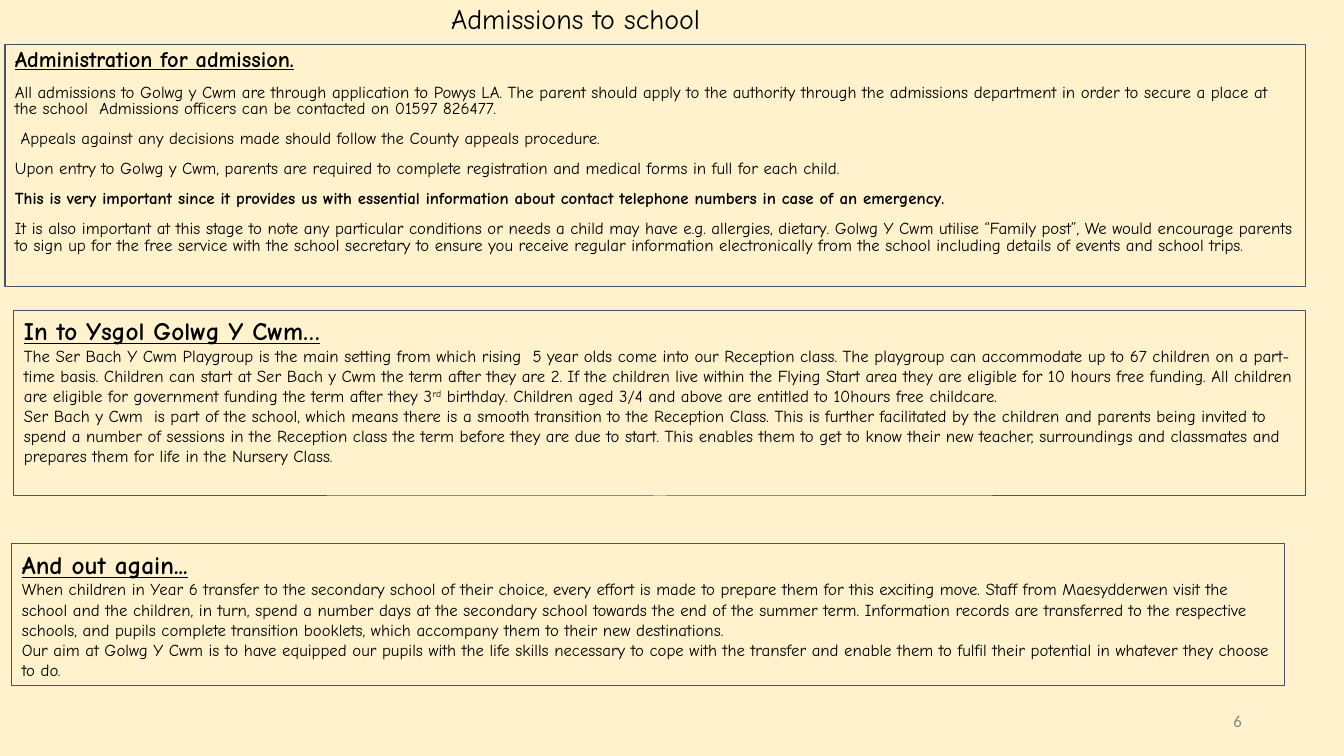
import pptx
import pptx.util
import pptx.dml.color
import pptx.enum.shapes
import pptx.enum.text
from dataclasses import dataclass

TITLE = ("Admissions to school", (441, -18, 492, 59))
PAGE_NUMBER = ("6", (950, 701, 302, 40))

# A paragraph is a list of (text, style) spans.
PANELS = [
    {
        "area": (5, 45, 1301, 242), "heading": "Administration for admission.",
        "heading_size": 16, "line_spacing": 0.8, "gap": 10,
        "paragraphs": [
            [("All admissions to Golwg y Cwm are through application to Powys LA. The parent should apply to the authority through the admissions department in order to secure a place at the school  Admissions officers can be contacted on 01597 826477.", "plain")],
            [(" Appeals against any decisions made should follow the County appeals procedure.", "plain")],
            [("Upon entry to Golwg y Cwm, parents are required to complete registration and medical forms in full for each child.", "plain")],
            [("This is very important since it provides us with essential information about contact telephone numbers in case of an emergency.", "bold")],
            [("It is also important at this stage to note any particular conditions or needs a child may have e.g. allergies, dietary. Golwg Y Cwm utilise “Family post”, We would encourage parents to sign up for the free service with the school secretary to ensure you receive regular information electronically from the school including details of events and school trips.", "plain")],
        ],
    },
    {
        "area": (14, 310, 1292, 186), "heading": "In to Ysgol Golwg Y Cwm…",
        "heading_size": 18, "line_spacing": 1.0, "gap": 0,
        "paragraphs": [
            [("The Ser Bach Y Cwm Playgroup is the main setting from which rising  5 year olds come into our Reception class. The playgroup can accommodate up to 67 children on a part-time basis. Children can start at Ser Bach y Cwm the term after they are 2. If the children live within the Flying Start area they are eligible for 10 hours free funding. All children are eligible for government funding the term after they 3", "plain"),
             ("rd", "superscript"),
             (" birthday. Children aged 3/4 and above are entitled to 10hours free childcare.", "plain")],
            [("Ser Bach y Cwm  is part of the school, which means there is a smooth transition to the Reception Class. This is further facilitated by the children and parents being invited to spend a number of sessions in the Reception class the term before they are due to start. This enables them to get to know their new teacher, surroundings and classmates and prepares them for life in the Nursery Class.", "plain")],
        ],
    },
    {
        "area": (12, 544, 1273, 142), "heading": "And out again...",
        "heading_size": 18, "line_spacing": 1.0, "gap": 0,
        "paragraphs": [
            [("When children in Year 6 transfer to the secondary school of their choice, every effort is made to prepare them for this exciting move. Staff from Maesydderwen visit the school and the children, in turn, spend a number days at the secondary school towards the end of the summer term. Information records are transferred to the respective schools, and pupils complete transition booklets, which accompany them to their new destinations.", "plain")],
            [("Our aim at Golwg Y Cwm is to have equipped our pupils with the life skills necessary to cope with the transfer and enable them to fulfil their potential in whatever they choose to do.", "plain")],
        ],
    },
]


@dataclass(frozen=True)
class Theme:
    background: str = "FFF2CC"
    border: str = "44546A"
    ink: str = "000000"
    muted: str = "888888"
    main_font: str = "Comic Neue"
    number_font: str = "Calibri"
    title_size: int = 20
    body_size: int = 12
    border_width: float = 0.75


THEME = Theme()
PX = 914400 / 100.8
ALIGN = pptx.enum.text.PP_ALIGN
ANCHOR = pptx.enum.text.MSO_ANCHOR


def emu(pixels):
    return pptx.util.Emu(round(pixels * PX))


def color(code):
    return pptx.dml.color.RGBColor.from_string(code)


def style_span(span, size, ink=THEME.ink, name=THEME.main_font, style="plain"):
    font = span.font
    font.size, font.name = pptx.util.Pt(size), name
    font.color.rgb = color(ink)
    font.bold = style in ("bold", "heading")
    font.underline = style == "heading"
    if style == "superscript":
        span._r.get_or_add_rPr().set("baseline", "30000")


def set_frame(frame, anchor):
    frame.word_wrap = True
    frame.auto_size = pptx.enum.text.MSO_AUTO_SIZE.NONE
    frame.vertical_anchor = anchor


def add_title(page):
    text, area = TITLE
    title = page.shapes.title
    title.left, title.top, title.width, title.height = map(emu, area)
    set_frame(title.text_frame, ANCHOR.BOTTOM)
    title.text_frame.text = text
    para = title.text_frame.paragraphs[0]
    para.alignment, para.line_spacing = ALIGN.LEFT, 0.9
    style_span(para.runs[0], THEME.title_size)


def add_panel(page, panel):
    box = page.shapes.add_shape(
        pptx.enum.shapes.MSO_SHAPE.RECTANGLE, *map(emu, panel["area"]))
    box.shadow.inherit = False
    box.fill.background()
    box.line.color.rgb = color(THEME.border)
    box.line.width = pptx.util.Pt(THEME.border_width)
    frame = box.text_frame
    set_frame(frame, ANCHOR.TOP)
    content = [[(panel["heading"], "heading")]] + panel["paragraphs"]
    for index, spans in enumerate(content):
        para = frame.add_paragraph() if index else frame.paragraphs[0]
        para.alignment, para.line_spacing = ALIGN.LEFT, panel["line_spacing"]
        if index:
            para.space_before = pptx.util.Pt(panel["gap"])
        for text, style in spans:
            span = para.add_run()
            span.text = text
            size = THEME.body_size if index else panel["heading_size"]
            style_span(span, size, style=style)


def add_page_number(page):
    text, area = PAGE_NUMBER
    box = page.shapes.add_textbox(*map(emu, area))
    set_frame(box.text_frame, ANCHOR.MIDDLE)
    box.text_frame.text = text
    para = box.text_frame.paragraphs[0]
    para.alignment = ALIGN.RIGHT
    style_span(para.runs[0], THEME.body_size, THEME.muted, THEME.number_font)


def main():
    deck = pptx.Presentation()
    deck.slide_width, deck.slide_height = emu(1344), emu(756)
    page = deck.slides.add_slide(deck.slide_layouts.get_by_name("Title Only"))
    page.background.fill.solid()
    page.background.fill.fore_color.rgb = color(THEME.background)
    add_title(page)
    for panel in PANELS:
        add_panel(page, panel)
    add_page_number(page)
    deck.save("out.pptx")


if __name__ == "__main__":
    main()
